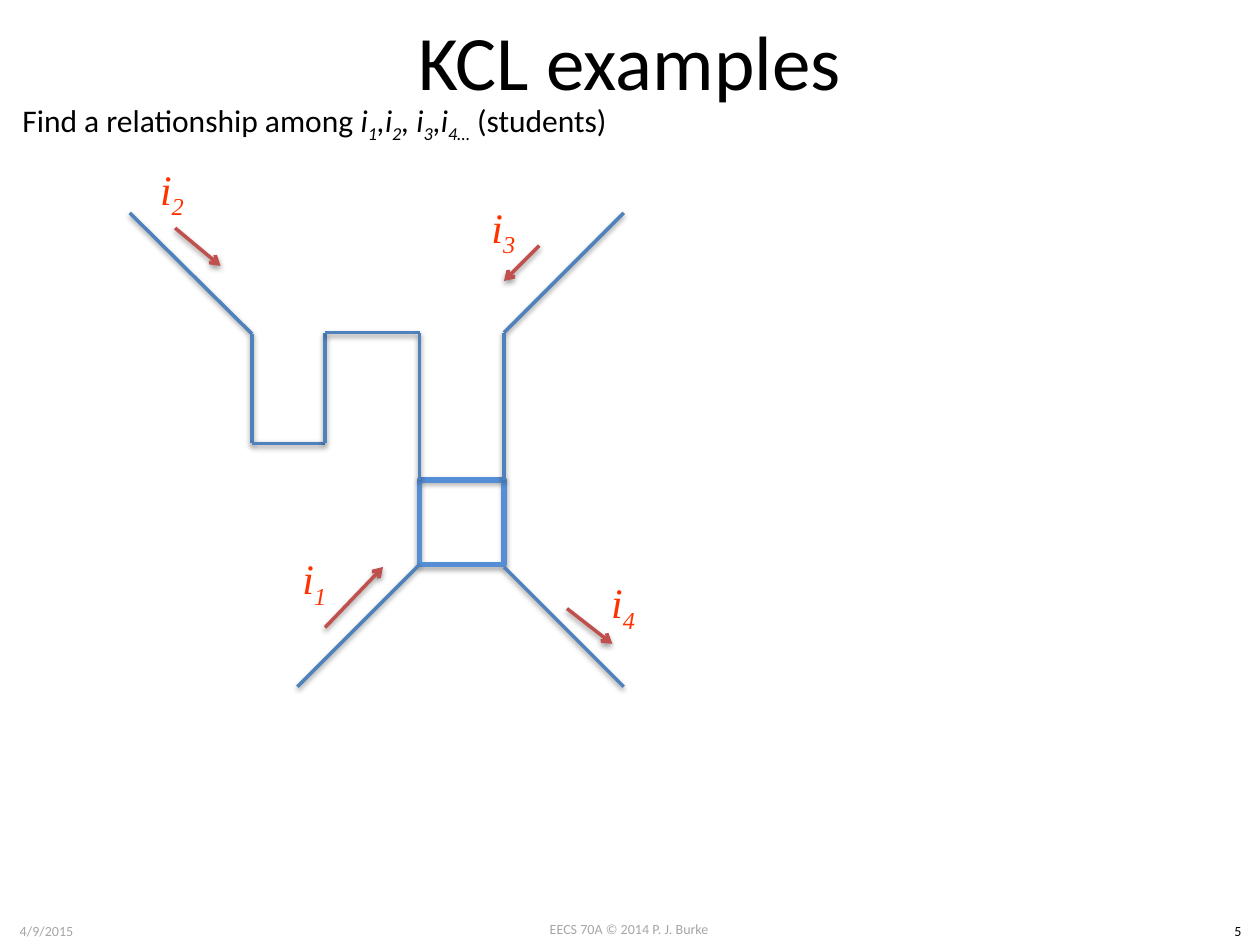
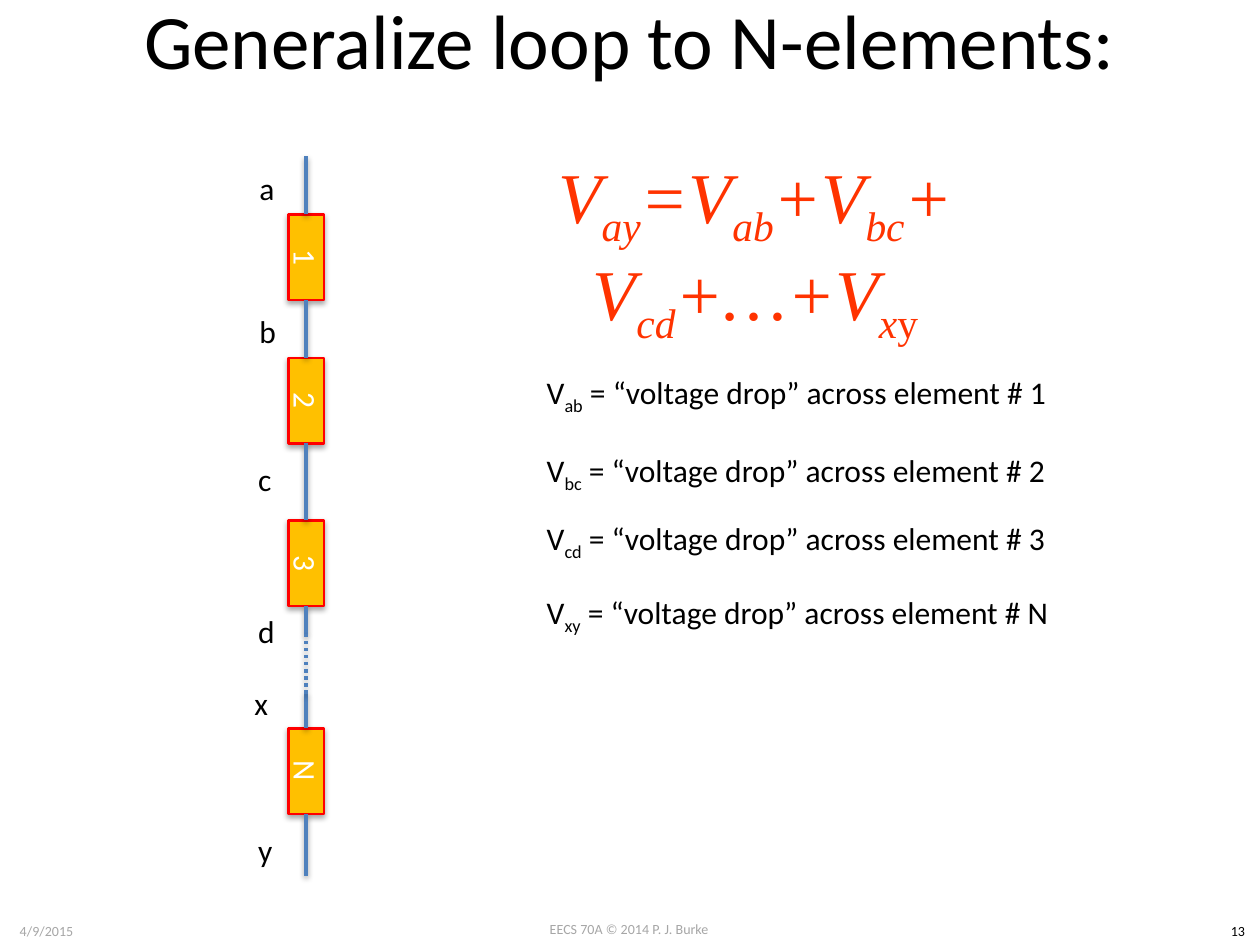
import itertools

import pptx
import pptx.dml.color
import pptx.enum.dml
import pptx.enum.shapes
import pptx.enum.text
import pptx.oxml
import pptx.oxml.ns
import pptx.util

Inches = pptx.util.Inches
Pt = pptx.util.Pt
ALIGN = pptx.enum.text.PP_ALIGN
ANCHOR = pptx.enum.text.MSO_ANCHOR
FIT = pptx.enum.text.MSO_AUTO_SIZE
RECT = pptx.enum.shapes.MSO_SHAPE.RECTANGLE
STRAIGHT = pptx.enum.shapes.MSO_CONNECTOR.STRAIGHT


class Theme:
    wide, high = 10, 7.5
    sans, serif = "Calibri", "Times New Roman"
    ink, grey, white = "000000", "A6A6A6", "FFFFFF"
    wire, arrow, node = "4F81BD", "C0504D", "558ED5"
    math, fill, edge = "FF3300", "FFC000", "FF0000"
    head, body, sign, sum, foot = 44, 18, 24, 40.8, 8


# Content: *...* is italic, |...| is subscript
FOOT = [  # text, left, top, width, colour
    ("EECS 70A © 2014 P. J. Burke", 3.83, 7.26, 2.33, Theme.grey),
    ("4/9/2015", 0, 7.27, 0.74, Theme.grey),
]

TASK = "Find a relationship among *i|1|,i|2|, i|3|,i|4…|* (students)"
NODE = (3.33, 3.81, 0.67)  # left, top, side
WIRES = [
    [(1.03, 1.69), (2, 2.65), (2, 3.52), (2.58, 3.52),
     (2.58, 2.64), (3.33, 2.64), (3.33, 3.81)],
    [(4.95, 1.69), (4, 2.64), (4, 3.81)],
    [(4, 4.5), (4.95, 5.45)],
    [(3.33, 4.48), (2.36, 5.45)],
]
FLOWS = [  # label, label corner, arrow start, arrow end
    ("*i|1|*", (2.11, 4.31), (2.58, 4.98), (3.04, 4.5)),
    ("*i|2|*", (0.98, 1.22), (1.39, 1.81), (1.75, 2.11)),
    ("*i|3|*", (3.61, 1.52), (4.28, 1.95), (4, 2.23)),
    ("*i|4|*", (4.56, 4.5), (4.5, 4.83), (4.86, 5.11)),
]

AXIS = 2.43
PART = (0.68, 0.28)  # length and breadth of an element
PARTS = {"1": 2.04, "2": 3.18, "3": 4.47, "N": 6.12}  # centre heights
LINKS = [  # upper and lower end: an element or a height
    (1.24, "1"), ("1", "2"), ("2", "3"), ("3", 5.03),
    (5.51, "N"), ("N", 6.95),
]
GAP = (5.03, 5.51)
POINTS = [  # name, left, top
    ("a", 1.96, 1.29), ("b", 1.96, 2.43), ("c", 1.95, 3.6),
    ("d", 1.95, 4.81), ("x", 1.92, 5.38), ("y", 1.95, 6.55),
]
SUM = "*V|ay|=V|ab|+V|bc|+V|cd|+…+V|x|*|y|"
DROPS = [("ab", "1", 2.91), ("bc", "2", 3.53), ("cd", "3", 4.07), ("xy", "N", 4.66)]


# Shared helpers
def rgb(code):
    return pptx.dml.color.RGBColor.from_string(code)


def style(run, size, color, face=Theme.sans):
    run.font.size, run.font.name = Pt(size), face
    run.font.color.rgb = rgb(color)


def shade(shape, alpha, dist):
    shape._element.spPr.append(pptx.oxml.parse_xml(
        f'<a:effectLst {pptx.oxml.ns.nsdecls("a")}><a:outerShdw blurRad="40000" '
        f'dist="{dist}" dir="5400000" rotWithShape="0"><a:srgbClr val="000000">'
        f'<a:alpha val="{alpha}000"/></a:srgbClr></a:outerShdw></a:effectLst>'))


def write(slide, text, left, top, width, height=0.4, size=Theme.body,
          color=Theme.ink, face=Theme.sans, mid=False, wrap=False):
    """Add a text box; mid centres the text both ways."""
    box = slide.shapes.add_textbox(*map(Inches, (left, top, width, height)))
    frame = box.text_frame
    frame.word_wrap = wrap or mid
    frame.auto_size = FIT.NONE if mid else FIT.SHAPE_TO_FIT_TEXT
    frame.vertical_anchor = ANCHOR.MIDDLE if mid else ANCHOR.TOP
    para = frame.paragraphs[0]
    para.alignment = ALIGN.CENTER if mid or wrap else ALIGN.LEFT
    for i, part in enumerate(text.split("*")):
        for j, bit in enumerate(part.split("|")):
            if not bit:
                continue
            run = para.add_run()
            run.text = bit
            style(run, size, color, face)
            run.font.italic = i % 2 == 1
            if j % 2:
                run._r.get_or_add_rPr().set("baseline", "-25000")


def wire(slide, start, end, color=Theme.wire, tip=False, joins=()):
    """Draw a line; joins holds the shape (or None) at start and end."""
    ends = list(map(Inches, start + end))
    line = slide.shapes.add_connector(STRAIGHT, *ends)
    # Elements are turned by 90 degrees: side 3 faces down, side 1 up
    for shape, join, side in zip(joins, (line.begin_connect, line.end_connect), (3, 1)):
        if shape is not None:
            join(shape, side)
    line.begin_x, line.begin_y, line.end_x, line.end_y = ends
    line.line.color.rgb, line.line.width = rgb(color), Pt(2)
    if tip:
        line.line._get_or_add_ln().append(pptx.oxml.parse_xml(
            f'<a:tailEnd {pptx.oxml.ns.nsdecls("a")} type="arrow"/>'))
    shade(line, 38, 20000)
    return line


def block(slide, left, top, width, height, edge, weight, fill=None):
    shape = slide.shapes.add_shape(RECT, *map(Inches, (left, top, width, height)))
    if fill:
        shape.fill.solid()
        shape.fill.fore_color.rgb = rgb(fill)
    else:
        shape.fill.background()
    shape.line.color.rgb, shape.line.width = rgb(edge), Pt(weight)
    shade(shape, 35, 23000)
    return shape


def start(deck, name, page, top, height):
    """Add a slide with its title and footer."""
    slide = deck.slides.add_slide(deck.slide_layouts[5])
    title = slide.shapes.title
    title.left, title.top, title.width, title.height = map(
        Inches, (0.5, top, Theme.wide - 1, height))
    frame = title.text_frame
    frame.text = name
    frame.vertical_anchor, frame.auto_size = ANCHOR.MIDDLE, FIT.NONE
    frame.paragraphs[0].alignment = ALIGN.CENTER
    style(frame.paragraphs[0].runs[0], Theme.head, Theme.ink)
    number = (page, 9.65, 7.27, 0.35, Theme.ink)
    for text, left, y, width, color in FOOT + [number]:
        write(slide, text, left, y, width, 0.24, Theme.foot, color, wrap=True)
    return slide


# Currents meeting at a node
def kcl(deck):
    slide = start(deck, "KCL examples", "5", 0, 0.95)
    write(slide, TASK, 0.08, 0.75, 4.96)
    left, top, side = NODE
    block(slide, left, top, side, side, Theme.node, 3)
    for route in WIRES:
        for a, b in itertools.pairwise(route):
            wire(slide, a, b)
    for label, spot, tail, tip in FLOWS:
        wire(slide, tail, tip, Theme.arrow, tip=True)
        write(slide, label, *spot, 0.77, 0.61, Theme.sign, Theme.math,
              Theme.serif, mid=True)


# Chain of elements and its voltage sum
def loop(deck):
    slide = start(deck, "Generalize loop to N-elements:", "13", -0.32, 1.25)
    long, thin = PART
    chain = {}
    for name, mid in PARTS.items():
        shape = block(slide, AXIS - long / 2, mid - thin / 2, long, thin,
                      Theme.edge, 1.5, Theme.fill)
        shape.rotation = 90
        frame = shape.text_frame
        frame.text = name
        frame.vertical_anchor = ANCHOR.MIDDLE
        frame.paragraphs[0].alignment = ALIGN.CENTER
        style(frame.paragraphs[0].runs[0], Theme.body, Theme.white)
        chain[name] = shape

    for up, down in LINKS:
        high = PARTS[up] + long / 2 if up in PARTS else up
        low = PARTS[down] - long / 2 if down in PARTS else down
        wire(slide, (AXIS, high), (AXIS, low),
             joins=(chain.get(up), chain.get(down)))
    dots = wire(slide, (AXIS, GAP[0]), (AXIS, GAP[1]))
    dots.line.dash_style = pptx.enum.dml.MSO_LINE.ROUND_DOT

    for name, left, top in POINTS:
        write(slide, name, left, top, 0.32)
    write(slide, SUM, 4.25, 1.17, 3.49, 1.62, Theme.sum, Theme.math,
          Theme.serif, mid=True)
    for pair, name, top in DROPS:
        write(slide, f"V|{pair}| = “voltage drop” across element # {name}",
              4.24, top, 4.22)


def main():
    deck = pptx.Presentation()
    deck.slide_width, deck.slide_height = Inches(Theme.wide), Inches(Theme.high)
    kcl(deck)
    loop(deck)
    deck.save("out.pptx")


if __name__ == "__main__":
    main()
